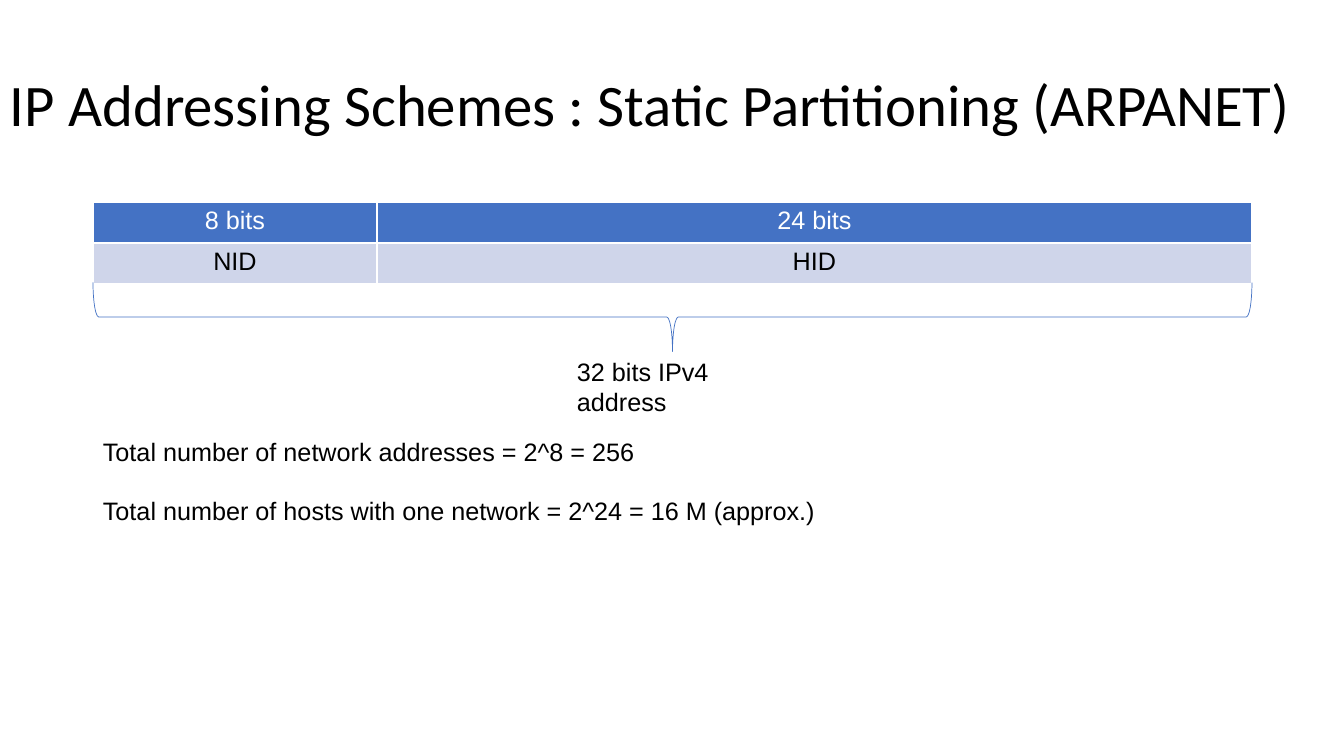
from lxml import etree
from pptx import Presentation
from pptx import util as u
from pptx.dml.color import RGBColor
from pptx.enum import shapes, text
from pptx.oxml.ns import qn

PX = 914400 / 100.8
HUES = {"ink": "000000", "paper": "FFFFFF", "blue": "4472C4", "pale": "CFD5EA"}


def px(*sizes):
    return [u.Emu(round(s * PX)) for s in sizes]


def write(frame, *lines, size=18, font="Arial", hue="ink", align="LEFT",
          anchor="TOP", space=1.0, gap=0):
    frame.word_wrap = True
    frame.vertical_anchor = text.MSO_ANCHOR[anchor]
    for i, line in enumerate(lines):
        para = frame.add_paragraph() if i else frame.paragraphs[0]
        para.alignment = text.PP_ALIGN[align]
        para.line_spacing = space
        para.space_before = u.Pt(gap if i else 0)
        run = para.add_run()
        run.text = line
        run.font.size = u.Pt(size)
        run.font.name = font
        run.font.bold = False
        run.font.color.rgb = RGBColor.from_string(HUES[hue])


deck = Presentation()
deck.slide_width, deck.slide_height = px(1344, 756)
slide = deck.slides.add_slide(deck.slide_layouts[6])
left, wide = 93, 1159

# Title
title = slide.shapes.add_textbox(*px(0, 34, 1344, 146))
write(title.text_frame, "IP Addressing Schemes : Static Partitioning (ARPANET)",
      size=42, font="Calibri", anchor="MIDDLE", space=0.9)

# Address field table
rows = [("8 bits", "24 bits", "blue", "paper"), ("NID", "HID", "pale", "ink")]
grid = slide.shapes.add_table(2, 2, *px(left, 202, wide, 82)).table
for col, width in zip(grid.columns, px(284, 875)):
    col.width = width
for r, (*words, fill, hue) in enumerate(rows):
    grid.rows[r].height = px(41)[0]
    for c, word in enumerate(words):
        cell = grid.cell(r, c)
        write(cell.text_frame, word, hue=hue, align="CENTER")
        props = cell._tc.get_or_add_tcPr()
        for side in ("lnL", "lnR", "lnT", "lnB"):
            edge = etree.SubElement(props, qn("a:" + side), w=str(u.Pt(1)))
            paint = etree.SubElement(edge, qn("a:solidFill"))
            etree.SubElement(paint, qn("a:srgbClr"), val=HUES["paper"])
        cell.fill.solid()
        cell.fill.fore_color.rgb = RGBColor.from_string(HUES[fill])

# Brace under the table, turned to point down
deep, mid = 69, 317
brace = slide.shapes.add_shape(
    shapes.MSO_SHAPE.RIGHT_BRACE,
    *px(left + (wide - deep) / 2, mid - wide / 2, deep, wide))
brace.rotation = 90
brace.shadow.inherit = False
brace.fill.background()
brace.line.color.rgb = RGBColor.from_string(HUES["blue"])
brace.line.width = u.Pt(0.5)

# Brace label
label = slide.shapes.add_textbox(*px(567, 351, 225, 40))
write(label.text_frame, "32 bits IPv4 address")

# Totals
totals = slide.shapes.add_textbox(*px(left, 431, wide, 102))
write(totals.text_frame, "Total number of network addresses = 2^8 = 256",
      "Total number of hosts with one network = 2^24 = 16 M (approx.)", gap=21)

deck.save("out.pptx")
